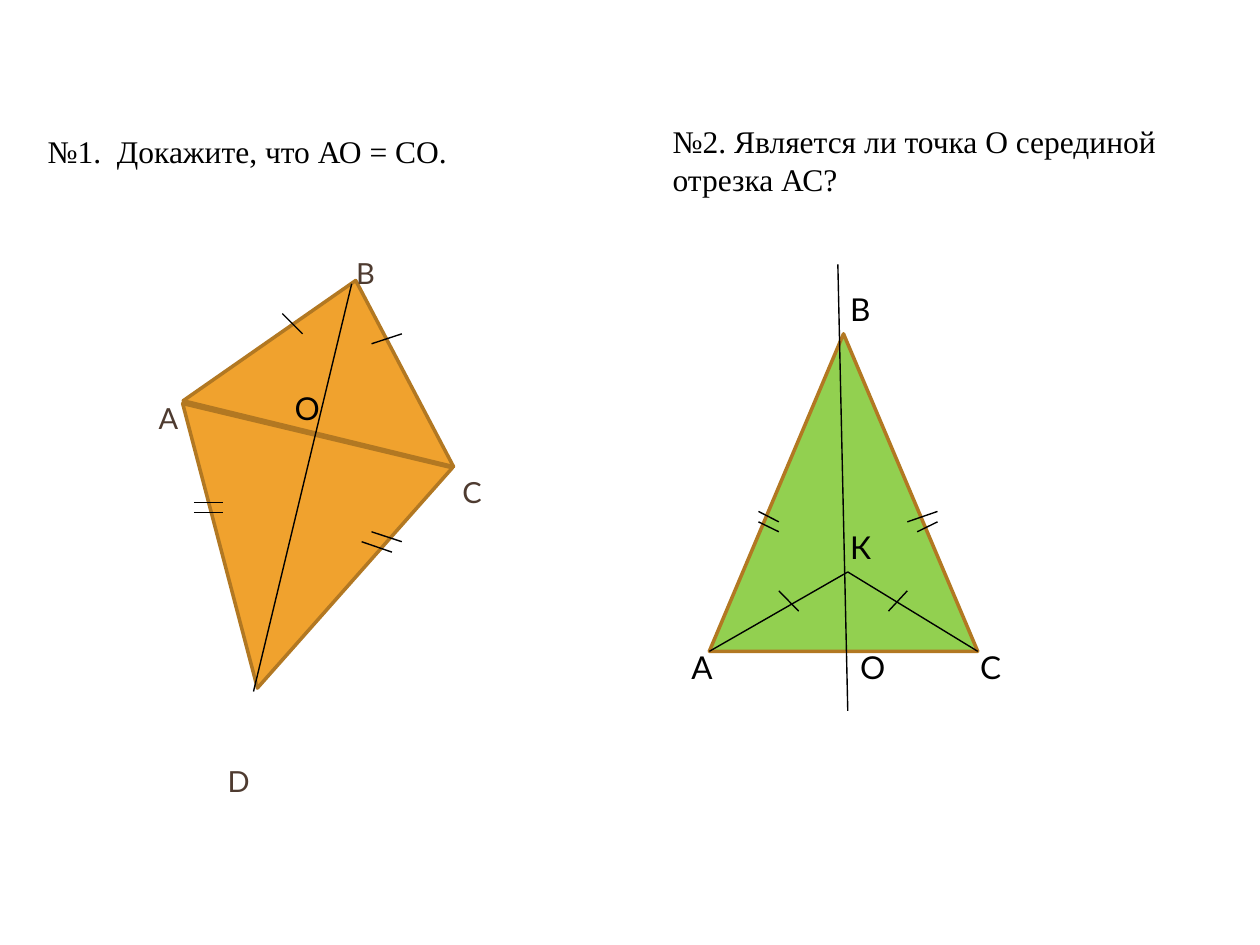
from lxml.etree import SubElement
from pptx import Presentation
from pptx.dml.color import RGBColor
from pptx.enum.shapes import MSO_CONNECTOR, MSO_SHAPE
from pptx.enum.text import MSO_ANCHOR
from pptx.oxml.ns import qn
from pptx.util import Cm, Pt

BLACK, BROWN, OUTLINE = "000000", "4E3B30", "B27822"
ORANGE, GREEN = "F0A22E", "92D050"
CAPTION = {"name": "Times New Roman", "size": Pt(18)}
LABEL = {"name": "Lato", "size": Pt(18)}
SMALL_LABEL = {"name": "Lato", "size": Pt(16.6)}


def rgb(value):
    return RGBColor.from_string(value)


def add_text(s, origin, box, text, font, color=BLACK, anchor=MSO_ANCHOR.TOP):
    x, y, w, h = box
    sp = s.shapes.add_textbox(Cm(origin[0] + x), Cm(origin[1] + y), Cm(w), Cm(h))
    tf = sp.text_frame
    tf.word_wrap = True
    tf.vertical_anchor = anchor
    r = tf.paragraphs[0].add_run()
    r.text = text
    for key, value in font.items():
        setattr(r.font, key, value)
    r.font.color.rgb = rgb(color)


def add_label(s, origin, text, x, y, font=LABEL, color=BLACK):
    add_text(s, origin, (x, y, 1, 1.02), text, font, color, MSO_ANCHOR.MIDDLE)


def add_triangle(s, origin, box, fill, rotation=0):
    x, y, w, h = box
    sp = s.shapes.add_shape(MSO_SHAPE.ISOSCELES_TRIANGLE, Cm(origin[0] + x),
                            Cm(origin[1] + y), Cm(w), Cm(h))
    sp.rotation = rotation
    sp.shadow.inherit = False
    sp.fill.solid()
    sp.fill.fore_color.rgb = rgb(fill)
    sp.line.color.rgb = rgb(OUTLINE)
    sp.line.width = Pt(2)


def add_lines(s, origin, lines):
    left, top = origin
    for x1, y1, x2, y2 in lines:
        line = s.shapes.add_connector(MSO_CONNECTOR.STRAIGHT, Cm(left + x1), Cm(top + y1),
                                      Cm(left + x2), Cm(top + y2))
        line.line.color.rgb = rgb(BLACK)
        line.line.width = Pt(0.79)
        SubElement(line._element.spPr, qn("a:effectLst"))


def add_kite_problem(s, origin):
    add_text(s, origin, (0.21, 0.53, 11.91, 1.78), "№1.  Докажите, что АО = СО.", CAPTION)
    add_triangle(s, origin, (3.49, 3.61, 5.61, 3.18), ORANGE, 13.7)
    add_triangle(s, origin, (2.5, 6.71, 5.59, 5.23), ORANGE, 193.4)
    diagonal = (6.59, 3.72, 4.61, 11.94)
    single_ticks = [(5.19, 4.32, 5.6, 4.73), (6.99, 4.93, 7.6, 4.73)]
    double_ticks = [(3.41, 8.13, 4, 8.13), (3.41, 8.33, 4, 8.33),
                    (6.99, 8.72, 7.6, 8.92), (6.79, 8.92, 7.4, 9.13)]
    add_lines(s, origin, [diagonal, *single_ticks, *double_ticks])
    for text, x, y in [("В", 6.43, 3), ("А", 2.45, 5.92), ("С", 8.57, 7.4), ("D", 3.84, 13.24)]:
        add_label(s, origin, text, x, y, SMALL_LABEL, BROWN)
    add_label(s, origin, "О", 5.19, 5.72)


def add_triangle_problem(s, origin):
    add_text(s, origin, (0.31, 0.34, 10.8, 1.8),
             "№2. Является ли точка О серединой отрезка АС?", CAPTION)
    add_triangle(s, origin, (1.3, 4.73, 5.41, 6.4), GREEN)
    axis = (3.89, 3.33, 4.09, 12.33)
    inner_sides = [(1.3, 11.13, 4.09, 9.53), (4.09, 9.53, 6.71, 11.13)]
    double_ticks = [(2.29, 8.31, 2.7, 8.52), (2.29, 8.52, 2.7, 8.72),
                    (5.29, 8.52, 5.9, 8.31), (5.49, 8.72, 5.9, 8.52)]
    single_ticks = [(2.7, 9.91, 3.1, 10.32), (4.91, 10.32, 5.29, 9.91)]
    add_lines(s, origin, [axis, *inner_sides, *double_ticks, *single_ticks])
    for text, x, y in [("А", 0.69, 10.93), ("В", 3.89, 3.72), ("С", 6.51, 10.93),
                       ("К", 3.89, 8.52), ("О", 4.09, 10.93)]:
        add_label(s, origin, text, x, y)


def main():
    prs = Presentation()
    prs.slide_width, prs.slide_height = Cm(25.4), Cm(19.05)
    s = prs.slides.add_slide(prs.slide_layouts[6])
    add_kite_problem(s, (0.5, 2))
    add_triangle_problem(s, (13, 2))
    prs.save("out.pptx")


if __name__ == "__main__":
    main()
